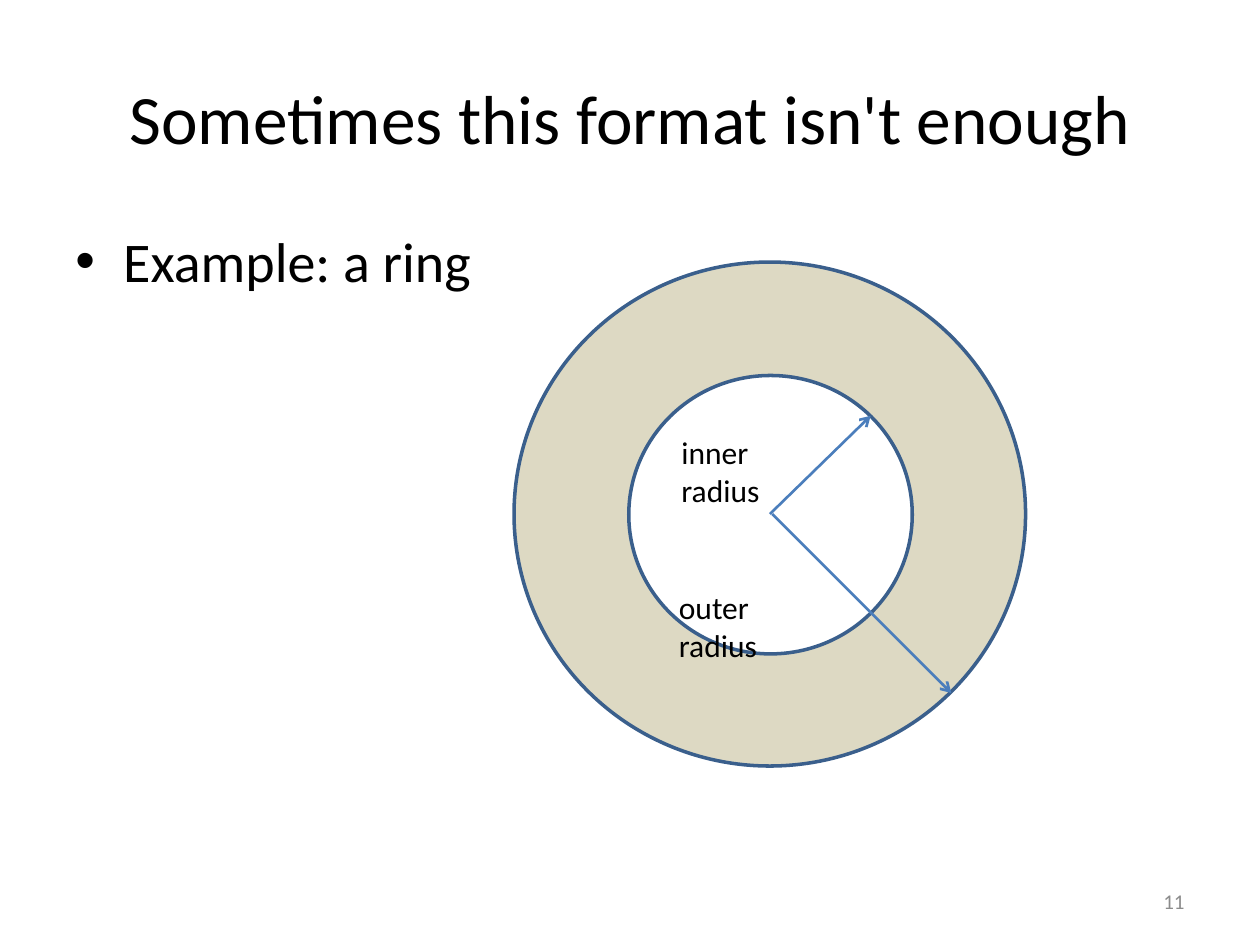
from dataclasses import dataclass, field

from lxml.etree import SubElement
from pptx import Presentation
from pptx.dml.color import RGBColor
from pptx.enum.shapes import MSO_CONNECTOR, MSO_SHAPE
from pptx.enum.text import MSO_ANCHOR, PP_ALIGN
from pptx.oxml.ns import qn
from pptx.util import Inches, Pt

BLACK = RGBColor(0x00, 0x00, 0x00)
WHITE = RGBColor(0xFF, 0xFF, 0xFF)
GRAY = RGBColor(0x8C, 0x8C, 0x8C)
TAN = RGBColor(0xDD, 0xD9, 0xC3)
OUTLINE_BLUE = RGBColor(0x3A, 0x5F, 0x8C)
ARROW_BLUE = RGBColor(0x4B, 0x7E, 0xBC)
FONT = "Calibri"
BULLET_INDENT = Inches(0.38)


@dataclass
class Label:
    text: str
    box: tuple[float, float, float, float]
    size: float
    color: RGBColor = BLACK
    anchor: MSO_ANCHOR = MSO_ANCHOR.TOP
    paragraph_format: dict = field(default_factory=dict)
    bullet: str = ""


@dataclass
class Circle:
    box: tuple[float, float, float, float]
    fill: RGBColor


@dataclass
class Radius:
    start: tuple[float, float]
    end: tuple[float, float]


TITLE = Label("Sometimes this format isn't enough", (0.5, 0.3, 9, 1.25), 39.6,
              anchor=MSO_ANCHOR.MIDDLE, paragraph_format={"alignment": PP_ALIGN.CENTER})
EXAMPLE = Label("Example: a ring", (0.5, 1.75, 9, 4.95), 32,
                paragraph_format={"space_before": Pt(6.4)}, bullet="•")
SLIDE_NUMBER = Label("11", (7.17, 6.95, 2.33, 0.4), 12, GRAY, MSO_ANCHOR.MIDDLE,
                     {"alignment": PP_ALIGN.RIGHT})
CIRCLES = [
    Circle((4.08, 2.08, 4.06, 4), TAN),
    Circle((4.99, 2.98, 2.25, 2.21), WHITE),
]
RADII = [
    Radius((6.11, 4.08), (6.91, 3.3)),
    Radius((6.13, 4.08), (7.55, 5.5)),
]
RADIUS_LABELS = [
    Label("inner radius", (5.31, 3.39, 1.24, 0.7), 18),
    Label("outer radius", (5.29, 4.62, 1.26, 0.7), 18),
]


def set_attributes(target, values: dict) -> None:
    for name, value in values.items():
        setattr(target, name, value)


def add_label(shapes, label: Label) -> None:
    frame = shapes.add_textbox(*map(Inches, label.box)).text_frame
    set_attributes(frame, {"word_wrap": True, "vertical_anchor": label.anchor})
    paragraph = frame.paragraphs[0]
    set_attributes(paragraph, label.paragraph_format)
    run = paragraph.add_run()
    run.text = label.text
    set_attributes(run.font, {"name": FONT, "size": Pt(label.size)})
    run.font.color.rgb = label.color
    if label.bullet:
        properties = paragraph._p.get_or_add_pPr()
        properties.set("marL", str(BULLET_INDENT))
        properties.set("indent", str(-BULLET_INDENT))
        SubElement(properties, qn("a:buFont"), typeface="Arial")
        SubElement(properties, qn("a:buChar"), char=label.bullet)


def add_circle(shapes, circle: Circle) -> None:
    shape = shapes.add_shape(MSO_SHAPE.OVAL, *map(Inches, circle.box))
    shape.shadow.inherit = False
    shape.fill.solid()
    shape.fill.fore_color.rgb = circle.fill
    shape.line.color.rgb = OUTLINE_BLUE
    shape.line.width = Pt(2)


def add_radius(shapes, radius: Radius) -> None:
    """Draw an arrow from the centre of the ring to one of its edges."""
    connector = shapes.add_connector(
        MSO_CONNECTOR.STRAIGHT, *map(Inches, radius.start + radius.end))
    connector.line.color.rgb = ARROW_BLUE
    connector.line.width = Pt(1.5)
    SubElement(connector.line._get_or_add_ln(), qn("a:tailEnd"), type="arrow")
    SubElement(connector._element.spPr, qn("a:effectLst"))


def main() -> None:
    presentation = Presentation()
    set_attributes(presentation, {"slide_width": Inches(10), "slide_height": Inches(7.5)})
    slide = presentation.slides.add_slide(presentation.slide_layouts[6])

    add_label(slide.shapes, TITLE)
    add_label(slide.shapes, EXAMPLE)

    ring = slide.shapes.add_group_shape()
    for circle in CIRCLES:
        add_circle(ring.shapes, circle)
    for radius in RADII:
        add_radius(ring.shapes, radius)
    for label in RADIUS_LABELS:
        add_label(ring.shapes, label)

    add_label(slide.shapes, SLIDE_NUMBER)
    presentation.save("out.pptx")


if __name__ == "__main__":
    main()
